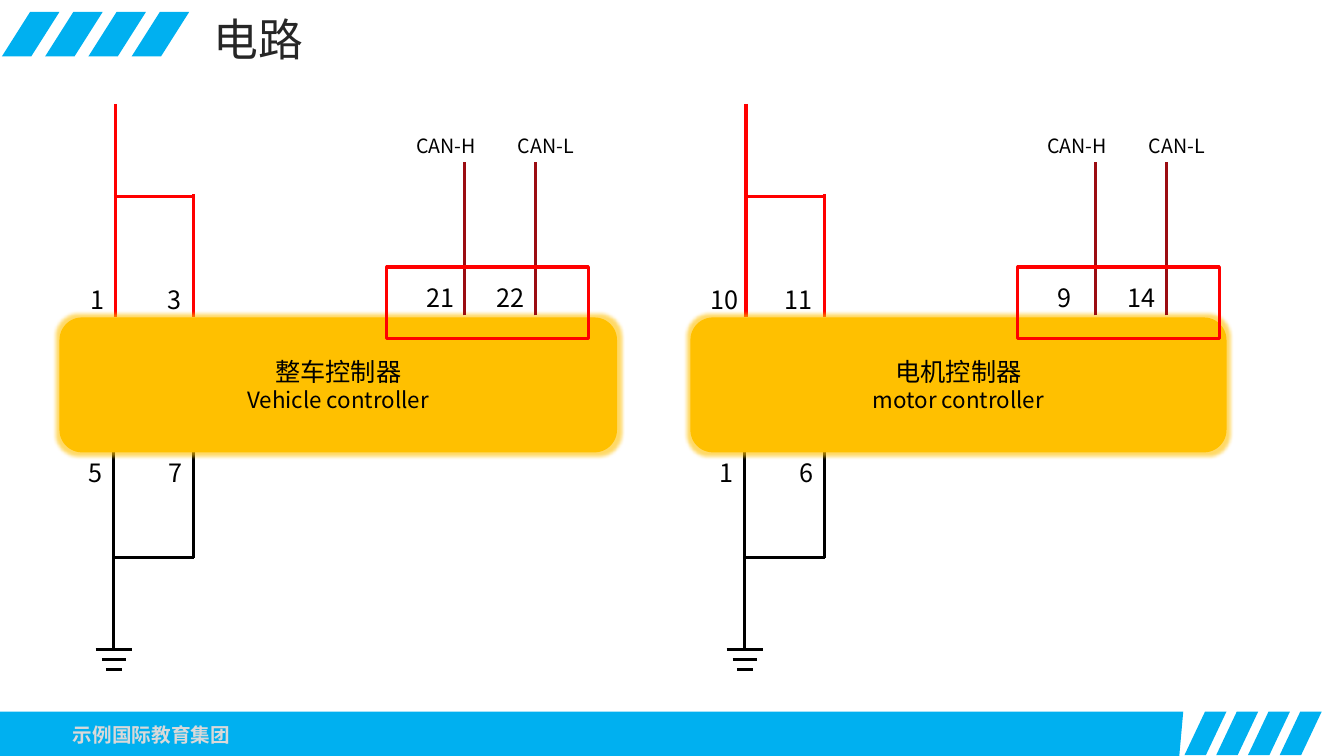
"""Build the circuit slide of the vehicle controller and the motor controller."""
from dataclasses import dataclass

from lxml.etree import SubElement
from pptx import Presentation
from pptx.dml.color import RGBColor
from pptx.enum.shapes import MSO_CONNECTOR, MSO_SHAPE
from pptx.enum.text import MSO_ANCHOR, PP_ALIGN
from pptx.oxml.ns import qn
from pptx.util import Cm, Pt


@dataclass(frozen=True)
class Theme:
    font: str = "Noto Sans CJK SC"
    blue: str = "00B0F0"
    gold: str = "FFC000"
    red: str = "FF0000"
    can: str = "9B0C12"
    black: str = "000000"
    title: str = "262626"
    footer: str = "D9D9D9"
    title_size: int = 32
    label_size: int = 18
    english_size: int = 16
    small_size: int = 14
    wire_width: float = 2.25
    glow_radius: int = Cm(0.18)


THEME = Theme()
TITLE = "电路"
FOOTER = "示例国际教育集团"

CIRCUITS = [
    {
        "left": 0, "box_width": 14.05,
        "names": ("整车控制器", "Vehicle controller"),
        "supply_pins": [("1", 2.03), ("3", 3.96)],
        "ground_pins": ["5", "7"],
        "can_pins": ["21", "22"],
    },
    {
        "left": 15.9, "box_width": 13.51,
        "names": ("电机控制器", "motor controller"),
        "supply_pins": [("10", 1.75), ("11", 3.61)],
        "ground_pins": ["1", "6"],
        "can_pins": ["9", "14"],
    },
]

GROUND_PIN_LEFTS = [1.98, 3.99]
CAN_WIRES = [("CAN-H", 10.24, 11.71), ("CAN-L", 12.8, 13.49)]
POWER_WIRES = [
    (2.9, 2.62, 2.9, 8.0, THEME.red),
    (2.87, 4.95, 4.9, 4.95, THEME.red),
    (4.88, 4.9, 4.88, 8.0, THEME.red),
    (2.87, 10.97, 2.87, 16.36, THEME.black),
    (4.88, 10.97, 4.88, 14.07, THEME.black),
    (2.84, 14.05, 4.88, 14.05, THEME.black),
]
EARTH_CENTER, EARTH_TOP, EARTH_STEP = 2.87, 16.36, 0.25
EARTH_WIDTHS = [0.92, 0.61, 0.4]

STRIPES = [
    {"left": 0.05, "top": 0.3, "height": 1.12, "lean": 0.71, "base": 0.74, "step": 1.09},
    {"left": 29.85, "top": 17.93, "height": 1.1, "lean": 0.52, "base": 0.54, "step": 0.8},
]
FOOTER_BAR = [(0, 17.93), (29.82, 17.93), (29.72, 19.05), (0, 19.05)]


def add_polygon(slide, corners):
    points = [(Cm(x), Cm(y)) for x, y in corners]
    builder = slide.shapes.build_freeform(*points[0])
    builder.add_line_segments(points[1:], close=True)
    polygon = builder.convert_to_shape()
    polygon.shadow.inherit = False
    polygon.fill.solid()
    polygon.fill.fore_color.rgb = RGBColor.from_string(THEME.blue)
    polygon.line.fill.background()


def add_stripes(slide, left, top, height, lean, base, step):
    for index in range(4):
        x = left + index * step
        add_polygon(slide, [(x + lean, top), (x, top + height),
                            (x + base, top + height), (x + lean + base, top)])


def add_wire(slide, x1, y1, x2, y2, color):
    wire = slide.shapes.add_connector(
        MSO_CONNECTOR.STRAIGHT, Cm(x1), Cm(y1), Cm(x2), Cm(y2))
    wire.line.color.rgb = RGBColor.from_string(color)
    wire.line.width = Pt(THEME.wire_width)
    SubElement(wire._element.spPr, qn("a:effectLst"))


def add_run(paragraph, text, size, color, bold=False):
    run = paragraph.add_run()
    run.text = text
    run.font.size = Pt(size)
    run.font.bold = bold
    run.font.color.rgb = RGBColor.from_string(color)
    run.font.name = THEME.font
    SubElement(run._r.get_or_add_rPr(), qn("a:ea")).set("typeface", THEME.font)


def add_label(slide, text, left, top, width, height,
              size=THEME.label_size, color=THEME.black):
    label = slide.shapes.add_textbox(Cm(left), Cm(top), Cm(width), Cm(height))
    frame = label.text_frame
    frame.word_wrap = True
    frame.margin_right = 0
    add_run(frame.paragraphs[0], text, size, color)


def add_footer(slide):
    add_polygon(slide, FOOTER_BAR)
    footer = slide.shapes.add_textbox(Cm(1.42), Cm(18.06), Cm(4.8), Cm(0.91))
    frame = footer.text_frame
    frame.word_wrap = True
    frame.vertical_anchor = MSO_ANCHOR.MIDDLE
    frame.paragraphs[0].alignment = PP_ALIGN.CENTER
    add_run(frame.paragraphs[0], FOOTER, THEME.small_size, THEME.footer, bold=True)


def add_controller(slide, left, width, names):
    controller = slide.shapes.add_shape(
        MSO_SHAPE.ROUNDED_RECTANGLE, Cm(left), Cm(8), Cm(width), Cm(3.4))
    controller.shadow.inherit = False
    controller.fill.solid()
    controller.fill.fore_color.rgb = RGBColor.from_string(THEME.gold)
    controller.line.fill.background()
    effects = controller._element.spPr.find(qn("a:effectLst"))
    glow = SubElement(effects, qn("a:glow"), rad=str(THEME.glow_radius))
    glow_color = SubElement(glow, qn("a:srgbClr"), val=THEME.gold)
    SubElement(glow_color, qn("a:alpha"), val="60000")
    frame = controller.text_frame
    frame.word_wrap = True
    frame.vertical_anchor = MSO_ANCHOR.MIDDLE
    chinese, english = frame.paragraphs[0], frame.add_paragraph()
    sizes = (THEME.label_size, THEME.english_size)
    for paragraph, name, size in zip((chinese, english), names, sizes):
        paragraph.alignment = PP_ALIGN.CENTER
        add_run(paragraph, name, size, THEME.black)


def add_can_frame(slide, left):
    can_frame = slide.shapes.add_shape(
        MSO_SHAPE.RECTANGLE, Cm(left), Cm(6.73), Cm(5.08), Cm(1.8))
    can_frame.shadow.inherit = False
    can_frame.fill.background()
    can_frame.line.color.rgb = RGBColor.from_string(THEME.red)
    can_frame.line.width = Pt(THEME.wire_width)


def add_circuit(slide, circuit):
    left = circuit["left"]
    for x1, y1, x2, y2, color in POWER_WIRES:
        add_wire(slide, left + x1, y1, left + x2, y2, color)
    add_controller(slide, left + 1.5, circuit["box_width"], circuit["names"])
    for pin, x in circuit["supply_pins"]:
        add_label(slide, pin, left + x, 7.04, 1.28, 1.02)
    for pin, x in zip(circuit["ground_pins"], GROUND_PIN_LEFTS):
        add_label(slide, pin, left + x, 11.4, 0.91, 1.02)
    for index, width in enumerate(EARTH_WIDTHS):
        x, y = left + EARTH_CENTER - width / 2, EARTH_TOP + index * EARTH_STEP
        add_wire(slide, x, y, x + width, y, THEME.black)
    for pin, (signal, label_left, x) in zip(circuit["can_pins"], CAN_WIRES):
        add_wire(slide, left + x, 7.95, left + x, 4.09, THEME.can)
        add_label(slide, pin, left + x - 1.22, 6.99, 1.22, 1.02)
        add_label(slide, signal, left + label_left, 3.25, 2.18, 0.86, THEME.small_size)
    add_can_frame(slide, left + 9.75)


def main():
    presentation = Presentation()
    presentation.slide_width, presentation.slide_height = Cm(33.87), Cm(19.05)
    slide = presentation.slides.add_slide(presentation.slide_layouts[6])
    for stripes in STRIPES:
        add_stripes(slide, **stripes)
    add_footer(slide)
    add_label(slide, TITLE, 5.13, 0.18, 16.05, 1.63, THEME.title_size, THEME.title)
    for circuit in CIRCUITS:
        add_circuit(slide, circuit)
    presentation.save("out.pptx")


if __name__ == "__main__":
    main()
